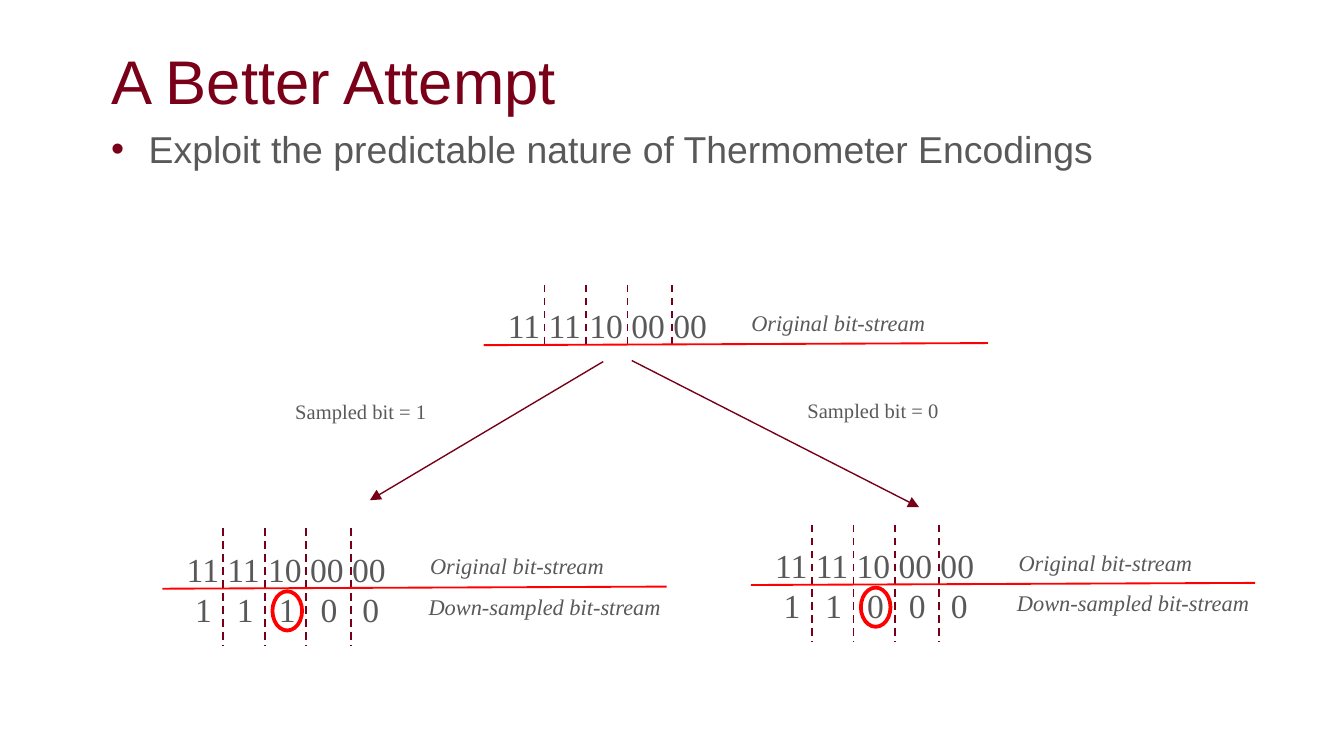
from lxml.etree import SubElement
from pptx import Presentation
from pptx.dml.color import RGBColor
from pptx.enum.dml import MSO_LINE
from pptx.enum.shapes import MSO_CONNECTOR, MSO_SHAPE
from pptx.enum.text import MSO_ANCHOR, MSO_AUTO_SIZE, PP_ALIGN
from pptx.oxml.ns import qn
from pptx.util import Cm, Pt

MAROON, DARK_MAROON, GREY, RED = "7A0019", "770018", "595959", "FF0000"
SERIF, SANS = "Times New Roman", "Arial"
DIVIDERS = (0.94, 1.73, 2.51, 3.35)
BIT_START, BIT_STEP = 0.16, 0.79


def rgb(color):
    return RGBColor.from_string(color)


def set_font(paragraph, size, color=GREY, name=SERIF, italic=False):
    font = paragraph.font
    font.size, font.name, font.italic = Pt(size), name, italic
    font.color.rgb = rgb(color)


def add_text(slide, left, top, width, height, lines, size, italic=False, wrap=True):
    frame = slide.shapes.add_textbox(Cm(left), Cm(top), Cm(width), Cm(height)).text_frame
    frame.word_wrap = wrap
    frame.text = "\n".join(lines)
    for paragraph in frame.paragraphs:
        set_font(paragraph, size, italic=italic)
    return frame


def add_line(slide, start, end, color=DARK_MAROON, width=1, dashed=False, arrow=False):
    line = slide.shapes.add_connector(MSO_CONNECTOR.STRAIGHT, *map(Cm, start + end))
    line.line.color.rgb = rgb(color)
    line.line.width = Pt(width)
    if dashed:
        line.line.dash_style = MSO_LINE.DASH
    if arrow:
        SubElement(line.line._get_or_add_ln(), qn("a:tailEnd"), type="triangle")
    SubElement(line._element.spPr, qn("a:effectLst"))


def set_frame_margins(frame):
    frame.margin_left = frame.margin_right = Cm(0.2)
    frame.margin_top = frame.margin_bottom = Cm(0.1)


def add_title(slide, text):
    title = slide.shapes.title
    title.left, title.top, title.width, title.height = map(Cm, (1.9, 0.3, 21.6, 2.4))
    frame = title.text_frame
    frame.text = text
    frame.auto_size = MSO_AUTO_SIZE.NONE
    frame.vertical_anchor = MSO_ANCHOR.MIDDLE
    set_frame_margins(frame)
    frame.paragraphs[0].alignment = PP_ALIGN.LEFT
    set_font(frame.paragraphs[0], 33, MAROON, SANS)


def add_bullet(slide, text):
    frame = slide.shapes.add_textbox(*map(Cm, (1.9, 2.29, 21.6, 8.25))).text_frame
    frame.word_wrap = True
    frame.text = text
    set_frame_margins(frame)
    paragraph = frame.paragraphs[0]
    properties = paragraph._p.get_or_add_pPr()
    properties.set("marL", str(Cm(0.71)))
    properties.set("indent", str(-Cm(0.71)))
    bullet_color = SubElement(properties, qn("a:buClr"))
    SubElement(bullet_color, qn("a:srgbClr"), val=MAROON)
    SubElement(properties, qn("a:buFont"), typeface=SANS)
    SubElement(properties, qn("a:buChar"), char="•")
    set_font(paragraph, 20, GREY, SANS)


def set_bit_tabs(paragraph, count):
    """Place each down-sampled bit under the middle of its pair."""
    tabs = SubElement(paragraph._p.get_or_add_pPr(), qn("a:tabLst"))
    for i in range(count):
        position = Cm(BIT_START + i * BIT_STEP)
        SubElement(tabs, qn("a:tab"), pos=str(position), algn="l")


def add_bit_stream(slide, left, top, sampled=""):
    """Draw the bit pairs and, if given, the down-sampled bits below them."""
    pairs = ["11 11 10 00 00"]
    if sampled:
        pairs.append("".join("\t" + bit for bit in sampled))
    frame = add_text(slide, left, top, 16.05, 1.8 if sampled else 1.02, pairs, 18)
    if sampled:
        # Tab stops come before the default run properties in the schema
        bits = frame.paragraphs[1]
        bits._p.remove(bits._p.pPr)
        set_bit_tabs(bits, len(sampled))
        set_font(bits, 18)

    divider_end = top + (1.96 if sampled else 0.87)
    for offset in DIVIDERS:
        x = left + offset
        add_line(slide, (x, top - 0.26), (x, divider_end), dashed=True)

    add_text(slide, left + 4.6, top + 0.07, 7.92, 0.77, ["Original bit-stream"], 12, italic=True)
    add_line(slide, (left - 0.21, top + 0.88), (left + 9.32, top + 0.84), RED)
    if sampled:
        add_text(slide, left + 4.57, top + 0.84, 7.92, 0.77,
                 ["Down-sampled bit-stream"], 12, italic=True)
        add_sample_ring(slide, left + 1.87, top + 0.93)


def add_sample_ring(slide, left, top):
    ring = slide.shapes.add_shape(MSO_SHAPE.OVAL, Cm(left), Cm(top), Cm(0.56), Cm(0.74))
    ring.shadow.inherit = False
    ring.fill.background()
    ring.line.color.rgb = rgb(RED)
    ring.line.width = Pt(2)


def add_branch(slide, start, end, label, label_left, label_top):
    add_line(slide, start, end, width=0.75, arrow=True)
    add_text(slide, label_left, label_top, 3, 0.73, [label], 11, wrap=False)


def main():
    prs = Presentation()
    prs.slide_width, prs.slide_height = Cm(25.4), Cm(14.28)
    slide = prs.slides.add_slide(prs.slide_layouts[5])
    add_title(slide, "A Better Attempt")
    add_bullet(slide, "Exploit the predictable nature of Thermometer Encodings")
    add_bit_stream(slide, 3.28, 10.24, "11100")
    add_bit_stream(slide, 9.35, 5.64)
    add_branch(slide, (11.4, 6.83), (6.99, 9.45), "Sampled bit = 1", 5.33, 7.42)
    add_branch(slide, (11.94, 6.81), (17.37, 9.58), "Sampled bit = 0", 15.01, 7.39)
    add_bit_stream(slide, 14.4, 10.17, "11000")
    prs.save("out.pptx")


if __name__ == "__main__":
    main()
